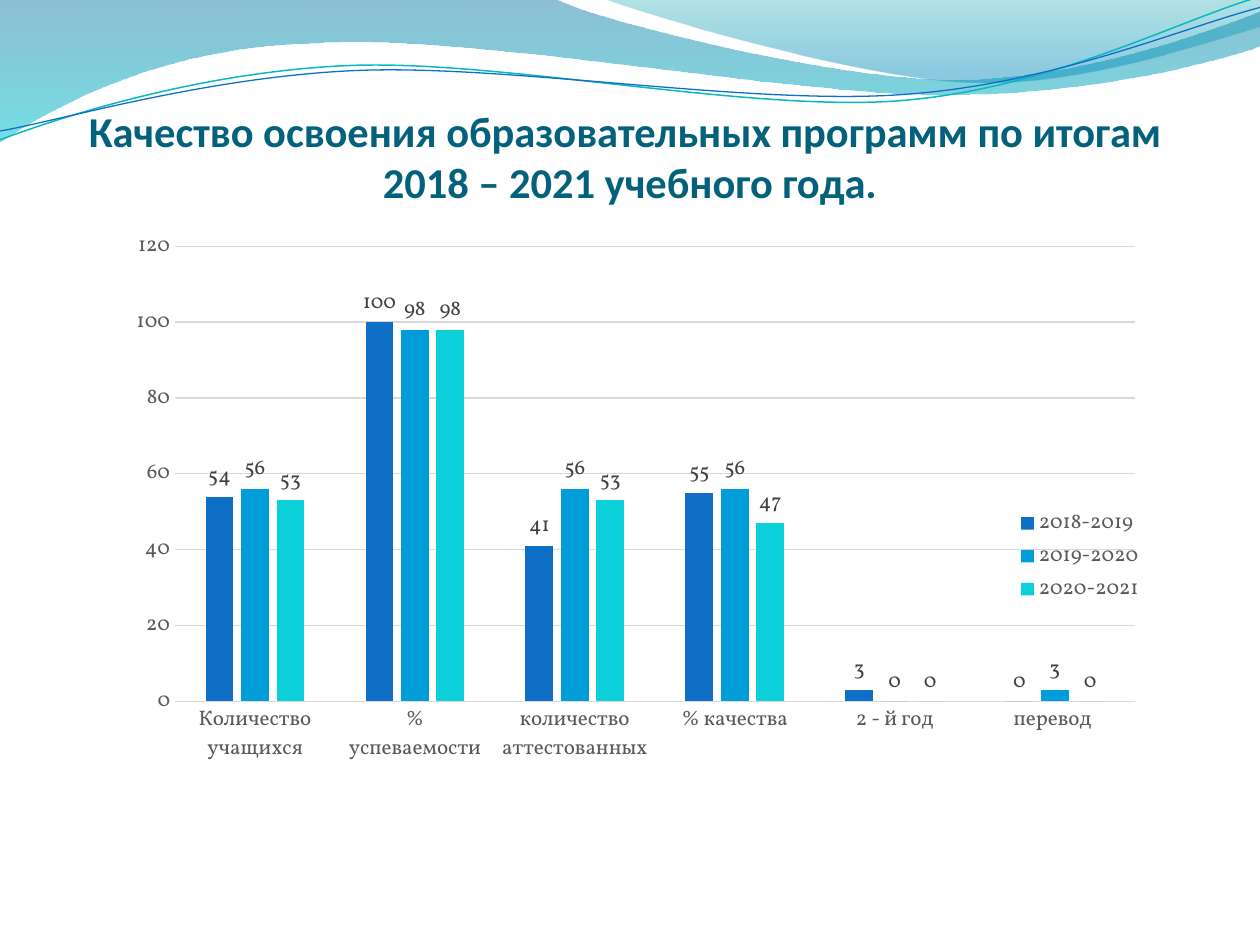
from math import cos, radians, sin

from lxml import etree
from pptx import Presentation
from pptx.chart.data import CategoryChartData
from pptx.dml.color import RGBColor
from pptx.enum.chart import XL_CHART_TYPE, XL_LABEL_POSITION, XL_LEGEND_POSITION, XL_TICK_MARK
from pptx.enum.text import MSO_ANCHOR, MSO_AUTO_SIZE, PP_ALIGN
from pptx.oxml import parse_xml
from pptx.oxml.ns import nsdecls, qn
from pptx.util import Inches, Pt

COLUMNS = XL_CHART_TYPE.COLUMN_CLUSTERED
OUTSIDE_END = XL_LABEL_POSITION.OUTSIDE_END
LEGEND_RIGHT = XL_LEGEND_POSITION.RIGHT
NO_TICK = XL_TICK_MARK.NONE
CENTER = PP_ALIGN.CENTER
BOTTOM = MSO_ANCHOR.BOTTOM
NO_AUTOFIT = MSO_AUTO_SIZE.NONE

TITLE_COLOR = RGBColor(0x04, 0x61, 0x7B)
AXIS_TEXT = RGBColor(0x59, 0x59, 0x59)
LABEL_TEXT = RGBColor(0x40, 0x40, 0x40)
GRID = RGBColor(0xD9, 0xD9, 0xD9)
BLUE = RGBColor(0x0F, 0x6F, 0xC6)
SKY = RGBColor(0x00, 0x9D, 0xD9)
TURQUOISE = RGBColor(0x0B, 0xD0, 0xD9)
TEAL_LINE = RGBColor(0x0A, 0xB8, 0xBF)
DEEP_TEAL = RGBColor(0x00, 0x74, 0xA1)
BRIGHT_TEAL = RGBColor(0x00, 0xC6, 0xCF)
SEA_GREEN = RGBColor(0x00, 0xA1, 0xA9)
OCEAN = RGBColor(0x00, 0x8B, 0xBF)

TITLE_FONT = "Calibri"
CHART_FONT = "Vollkorn"

# Content
TITLE_LINES = ["Качество освоения образовательных программ по итогам ",
               "2018 – 2021 учебного года."]
CATEGORIES = ["Количество учащихся", "% успеваемости", "количество аттестованных",
              "% качества", "2 - й год", "перевод "]
SERIES = [
    ("2018-2019", (54, 100, 41, 55, 3, 0), BLUE),
    ("2019-2020", (56, 98, 56, 56, 0, 3), SKY),
    ("2020-2021", (53, 98, 53, 47, 0, 0), TURQUOISE),
]

# Wave outlines in inches: a pair is a line end, six numbers are a Bézier segment.
# Gradient stops: position, colour, opacity in percent.
WAVE_BANDS = [
    ([(0, 0), (4.4, -0.01), (4.76, 0.17, 6.64, 0.63, 7.58, 0.63),
      (8.53, 0.63, 9.58, 0.26, 10, 0.09), (10.01, 0.36),
      (9.83, 0.44, 8.7, 0.76, 7.46, 0.75), (6.22, 0.75, 3.82, 0.28, 2.57, 0.34),
      (1.29, 0.36, 0.46, 0.83, -0.01, 1.13), (0, 0)],
     [(0, DEEP_TEAL, 45), (1, BRIGHT_TEAL, 55)]),
    ([(4.79, -0.01), (5.09, 0.11, 6.82, 0.62, 7.69, 0.65),
      (8.56, 0.69, 9.61, 0.32, 10, 0.21), (10, 0), (4.79, -0.01)],
     [(0, SEA_GREEN, 30), (0.8, OCEAN, 45)]),
]
# Outline, centre of rotation, colour, width in points
WAVE_LINES = [
    ([(0, 1.11), (0.48, 0.93, 1.58, 0.57, 2.77, 0.52),
      (3.95, 0.47, 5.93, 0.89, 7.13, 0.8), (8.33, 0.71, 9.38, 0.15, 9.98, -0.02)],
     (4.99, 0.57), TEAL_LINE, 0.85),
    ([(0, 1.04), (0.47, 0.96, 1.64, 0.61, 2.83, 0.56),
      (4.03, 0.51, 5.97, 0.84, 7.17, 0.75), (8.36, 0.67, 9.41, 0.21, 10, 0.06)],
     (5, 0.59), BLUE, 0.75),
]
WAVE_TILT = 2.7  # degrees, counter-clockwise
PLOT_LAYOUT = (0.05, 0.047, 0.93, 0.665)
LEGEND_LAYOUT = (0.862, 0.425, 0.13, 0.15)


def level(segments, center):
    """Turn the points of a tilted wave back to the horizontal."""
    angle = radians(WAVE_TILT)

    def turn(x, y):
        dx, dy = x - center[0], y - center[1]
        return (center[0] + dx * cos(angle) - dy * sin(angle),
                center[1] + dx * sin(angle) + dy * cos(angle))

    return [sum((turn(*pair) for pair in zip(segment[::2], segment[1::2])), ())
            for segment in segments]


def add_wave(slide, segments, closed):
    """Build the outline through all points, then join control points into curves."""
    start, *rest = [(Inches(x), Inches(y)) for segment in segments
                    for x, y in zip(segment[::2], segment[1::2])]
    builder = slide.shapes.build_freeform(*start)
    builder.add_line_segments(rest, close=closed)
    shape = builder.convert_to_shape()
    shape.shadow.inherit = False
    lines = iter(list(shape._element.spPr.iter(qn("a:lnTo"))))
    for segment in segments[1:]:
        line = next(lines)
        if len(segment) == 6:
            line.tag = qn("a:cubicBezTo")
            for control in (next(lines), next(lines)):
                line.append(control[0])
                control.getparent().remove(control)
    return shape


def fill_gradient(shape, stops):
    shape.line.fill.background()
    shape.fill.gradient()
    shape.fill.gradient_angle = 270  # first stop on top
    for stop, (position, color, _) in zip(shape.fill.gradient_stops, stops):
        stop.position = position
        stop.color.rgb = color
    for color_element, (_, _, opacity) in zip(shape._element.spPr.iter(qn("a:srgbClr")), stops):
        etree.SubElement(color_element, qn("a:alpha")).set("val", str(opacity * 1000))


def set_font(font, size, color, name=CHART_FONT):
    font.size = Pt(size)
    font.name = name
    font.color.rgb = color


def layout_xml(box, inner=False):
    target = '<c:layoutTarget val="inner"/>' if inner else ""
    modes = "".join(f'<c:{key}Mode val="edge"/>' for key in "xy")
    sizes = "".join(f'<c:{key} val="{value}"/>' for key, value in zip("xywh", box))
    return parse_xml(f'<c:layout {nsdecls("c")}><c:manualLayout>{target}{modes}{sizes}'
                     '</c:manualLayout></c:layout>')


def add_results_chart(slide):
    data = CategoryChartData(number_format="0")
    data.categories = CATEGORIES
    for name, values, _ in SERIES:
        data.add_series(name, values)
    chart = slide.shapes.add_chart(COLUMNS, Inches(0.98), Inches(1.7),
                                   Inches(8.19), Inches(5.43), data).chart
    chart.has_title = False
    chart.font.size = Pt(10)
    chart.font.name = CHART_FONT

    # Bars and value labels
    plot = chart.plots[0]
    plot.gap_width, plot.overlap = 219, -27
    plot.vary_by_categories = False
    for series, (_, _, color) in zip(plot.series, SERIES):
        series.format.fill.solid()
        series.format.fill.fore_color.rgb = color
        labels = series.data_labels
        labels.show_value = True
        labels.position = OUTSIDE_END
        set_font(labels.font, 12, LABEL_TEXT)

    # Axes
    category_axis, value_axis = chart.category_axis, chart.value_axis
    for axis in (category_axis, value_axis):
        axis.major_tick_mark = axis.minor_tick_mark = NO_TICK
        set_font(axis.tick_labels.font, 12, AXIS_TEXT)
    value_axis.format.line.fill.background()
    for line in (category_axis.format.line, value_axis.major_gridlines.format.line):
        line.color.rgb = GRID
        line.width = Pt(0.75)

    # Legend over the plot, both placed by hand
    chart.has_legend = True
    legend = chart.legend
    legend.position = LEGEND_RIGHT
    legend.include_in_layout = False
    set_font(legend.font, 12, AXIS_TEXT)
    legend._element.find(qn("c:legendPos")).addnext(layout_xml(LEGEND_LAYOUT))
    plot_area = chart._chartSpace.chart.plotArea
    for old_layout in plot_area.findall(qn("c:layout")):
        plot_area.remove(old_layout)
    plot_area.insert(0, layout_xml(PLOT_LAYOUT, inner=True))


def fill_title(title):
    title.left, title.top = Inches(0.5), Inches(0.77)
    title.width, title.height = Inches(9), Inches(0.87)
    frame = title.text_frame
    frame.word_wrap = True
    frame.auto_size = NO_AUTOFIT
    frame.vertical_anchor = BOTTOM
    frame.margin_left = frame.margin_right = frame.margin_bottom = 0
    frame.margin_top = Inches(0.05)
    paragraph = frame.paragraphs[0]
    paragraph.alignment = CENTER
    for index, line in enumerate(TITLE_LINES):
        if index:
            paragraph.add_line_break()
        run = paragraph.add_run()
        run.text = line
        run.font.bold = True
        set_font(run.font, 24.3, TITLE_COLOR, TITLE_FONT)


def main():
    presentation = Presentation()
    presentation.slide_width, presentation.slide_height = Inches(10), Inches(7.5)
    slide = presentation.slides.add_slide(presentation.slide_layouts[5])
    for segments, stops in WAVE_BANDS:
        fill_gradient(add_wave(slide, segments, closed=True), stops)
    for segments, center, color, width in WAVE_LINES:
        wave = add_wave(slide, level(segments, center), closed=False)
        wave.rotation = -WAVE_TILT
        wave.fill.background()
        wave.line.color.rgb = color
        wave.line.width = Pt(width)
    title = slide.shapes.title
    slide.shapes._spTree.append(title._element)  # in front of the waves
    fill_title(title)
    add_results_chart(slide)
    presentation.save("out.pptx")


if __name__ == "__main__":
    main()
